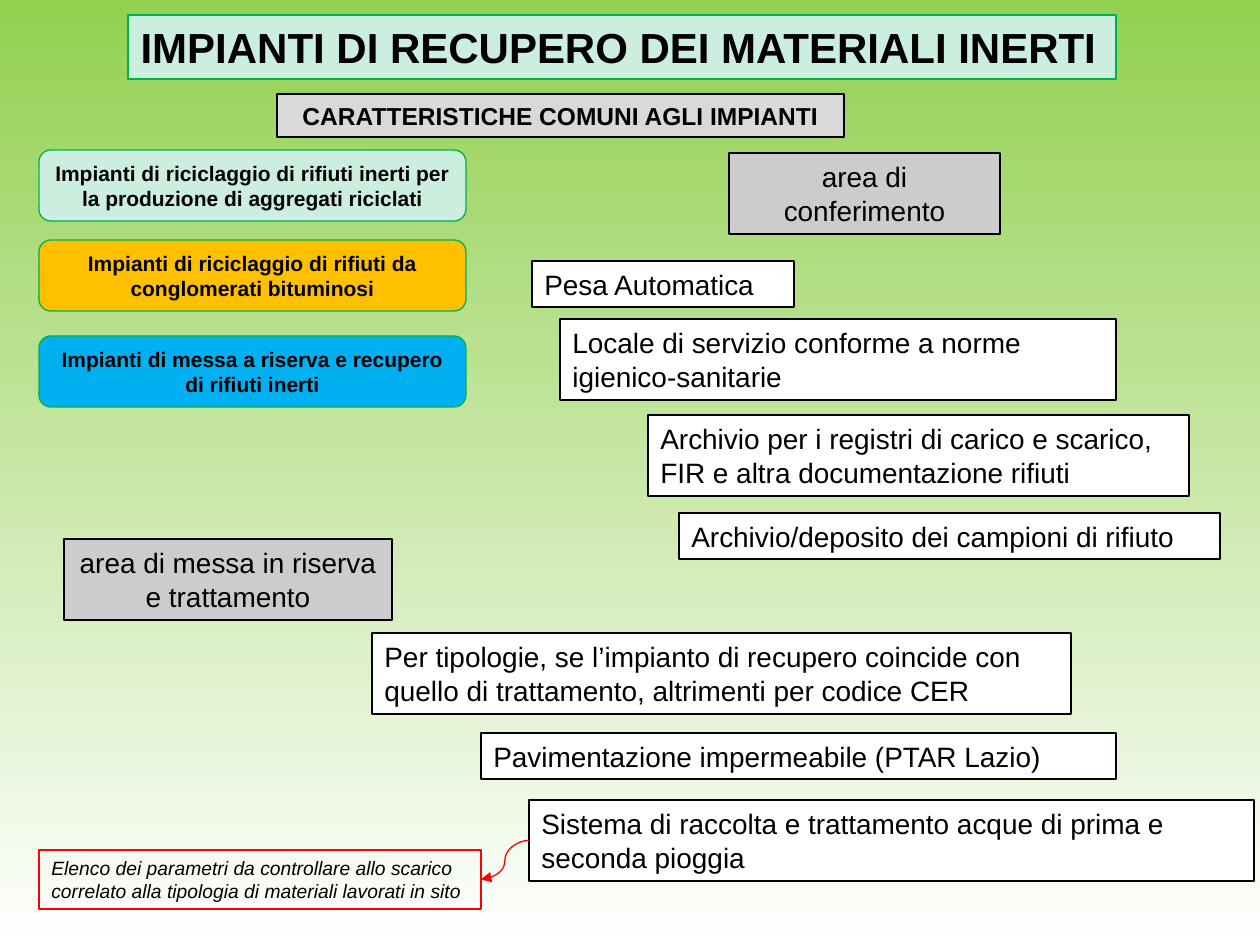
from lxml import etree
from pptx import Presentation
from pptx.dml.color import RGBColor
from pptx.enum.shapes import MSO_CONNECTOR, MSO_SHAPE
from pptx.enum.text import MSO_ANCHOR, MSO_AUTO_SIZE, PP_ALIGN
from pptx.oxml.ns import qn
from pptx.util import Emu, Inches, Pt

PX_PER_INCH = 126
FONT = "Arial"
LINE_WIDTH = Pt(0.75)

BLACK = RGBColor(0x00, 0x00, 0x00)
WHITE = RGBColor(0xFF, 0xFF, 0xFF)
LIGHT_GREY = RGBColor(0xD9, 0xD9, 0xD9)
GREY = RGBColor(0xCC, 0xCC, 0xCC)
LIME = RGBColor(0x92, 0xD0, 0x50)
MINT = RGBColor(0xCC, 0xEE, 0xDF)
GREEN = RGBColor(0x00, 0xB0, 0x50)
AMBER = RGBColor(0xFF, 0xC0, 0x00)
BLUE = RGBColor(0x00, 0xB0, 0xF0)
RED = RGBColor(0xFF, 0x00, 0x00)

RECTANGLE = MSO_SHAPE.RECTANGLE
ROUNDED = MSO_SHAPE.ROUNDED_RECTANGLE
CURVE = MSO_CONNECTOR.CURVE
LEFT, CENTER = PP_ALIGN.LEFT, PP_ALIGN.CENTER
MIDDLE = MSO_ANCHOR.MIDDLE
NO_AUTOFIT = MSO_AUTO_SIZE.NONE
LEFT_SIDE, RIGHT_SIDE = 1, 3

PLANT_TYPES = [
    (150, MINT, "Impianti di riciclaggio di rifiuti inerti per la produzione di aggregati riciclati"),
    (240, AMBER, "Impianti di riciclaggio di rifiuti da conglomerati bituminosi"),
    (336, BLUE, "Impianti di messa a riserva e recupero di rifiuti inerti"),
]

# Each area: its heading, then its requirements, as (left, top, width, height), text
DELIVERY_AREA = [
    ((729, 153, 271, 81), "area di conferimento"),
    ((532, 261, 262, 46), "Pesa Automatica"),
    ((560, 319, 556, 81), "Locale di servizio conforme a norme igienico-sanitarie"),
    ((648, 415, 541, 81), "Archivio per i registri di carico e scarico, FIR e altra documentazione rifiuti"),
    ((679, 513, 541, 46), "Archivio/deposito dei campioni di rifiuto"),
]
TREATMENT_AREA = [
    ((64, 539, 328, 81), "area di messa in riserva e trattamento"),
    ((372, 633, 699, 81), "Per tipologie, se l’impianto di recupero coincide con quello di trattamento, "
                          "altrimenti per codice CER"),
    ((481, 733, 635, 46), "Pavimentazione impermeabile (PTAR Lazio)"),
    ((529, 800, 725, 81), "Sistema di raccolta e trattamento acque di prima e seconda pioggia"),
]


def px(value):
    return Emu(round(value * Inches(1) / PX_PER_INCH))


def set_background(page):
    fill = page.background.fill
    fill.gradient()
    fill.gradient_angle = 270
    for stop, color in zip(fill.gradient_stops, (LIME, WHITE)):
        stop.color.rgb = color


def write_text(box, text, size=16, align=LEFT, bold=False, italic=False):
    frame = box.text_frame
    frame.word_wrap = True
    frame.auto_size = NO_AUTOFIT
    frame.vertical_anchor = MIDDLE
    para = frame.paragraphs[0]
    para.alignment = align
    span = para.add_run()
    span.text = text
    font = span.font
    font.name, font.size, font.color.rgb = FONT, Pt(size), BLACK
    font.bold, font.italic = bold, italic


def paint(box, fill, line):
    """Fill and outline a box; no fill colour leaves it transparent."""
    if fill is None:
        box.fill.background()
    else:
        box.fill.solid()
        box.fill.fore_color.rgb = fill
    box.line.color.rgb = line
    box.line.width = LINE_WIDTH


def add_title(page, place, text):
    title = page.shapes.title
    title.left, title.top, title.width, title.height = map(px, place)
    paint(title, MINT, GREEN)
    write_text(title, text, size=24, bold=True)


def add_box(shapes, place, text, fill=WHITE, line=BLACK, kind=RECTANGLE, **text_format):
    box = shapes.add_shape(kind, *map(px, place))
    box.shadow.inherit = False
    paint(box, fill, line)
    write_text(box, text, **text_format)
    return box


def add_area(page, entries):
    """Group a grey heading with its white requirement boxes; return the last box."""
    group = page.shapes.add_group_shape()
    (heading_place, heading), *requirements = entries
    add_box(group.shapes, heading_place, heading, fill=GREY, align=CENTER)
    return [add_box(group.shapes, place, text) for place, text in requirements][-1]


def add_curved_arrow(page, source, target):
    """Run from the left side of source to the right side of target."""
    arrow = page.shapes.add_connector(CURVE, 0, 0, 0, 0)
    arrow.begin_connect(source, LEFT_SIDE)
    arrow.end_connect(target, RIGHT_SIDE)
    arrow.line.color.rgb = RED
    arrow.line.width = LINE_WIDTH
    etree.SubElement(arrow.line._get_or_add_ln(), qn("a:tailEnd"), type="triangle")
    etree.SubElement(arrow._element.spPr, qn("a:effectLst"))


def main():
    deck = Presentation()
    deck.slide_width, deck.slide_height = Inches(10), Inches(7.5)
    page = deck.slides.add_slide(deck.slide_layouts[5])
    set_background(page)

    add_title(page, (128, 15, 988, 64), "IMPIANTI DI RECUPERO DEI MATERIALI INERTI")
    add_box(page.shapes, (277, 94, 567, 43), "CARATTERISTICHE COMUNI AGLI IMPIANTI",
            fill=LIGHT_GREY, size=14, align=CENTER, bold=True)
    add_area(page, DELIVERY_AREA)
    rainwater = add_area(page, TREATMENT_AREA)

    for top, color, text in PLANT_TYPES:
        add_box(page.shapes, (39, top, 427, 71), text, fill=color, line=GREEN,
                kind=ROUNDED, size=12, align=CENTER, bold=True)

    parameters = add_box(
        page.shapes, (39, 850, 442, 59),
        "Elenco dei parametri da controllare allo scarico correlato alla tipologia "
        "di materiali lavorati in sito",
        fill=None, line=RED, size=11, italic=True)
    add_curved_arrow(page, rainwater, parameters)
    deck.save("out.pptx")


if __name__ == "__main__":
    main()
